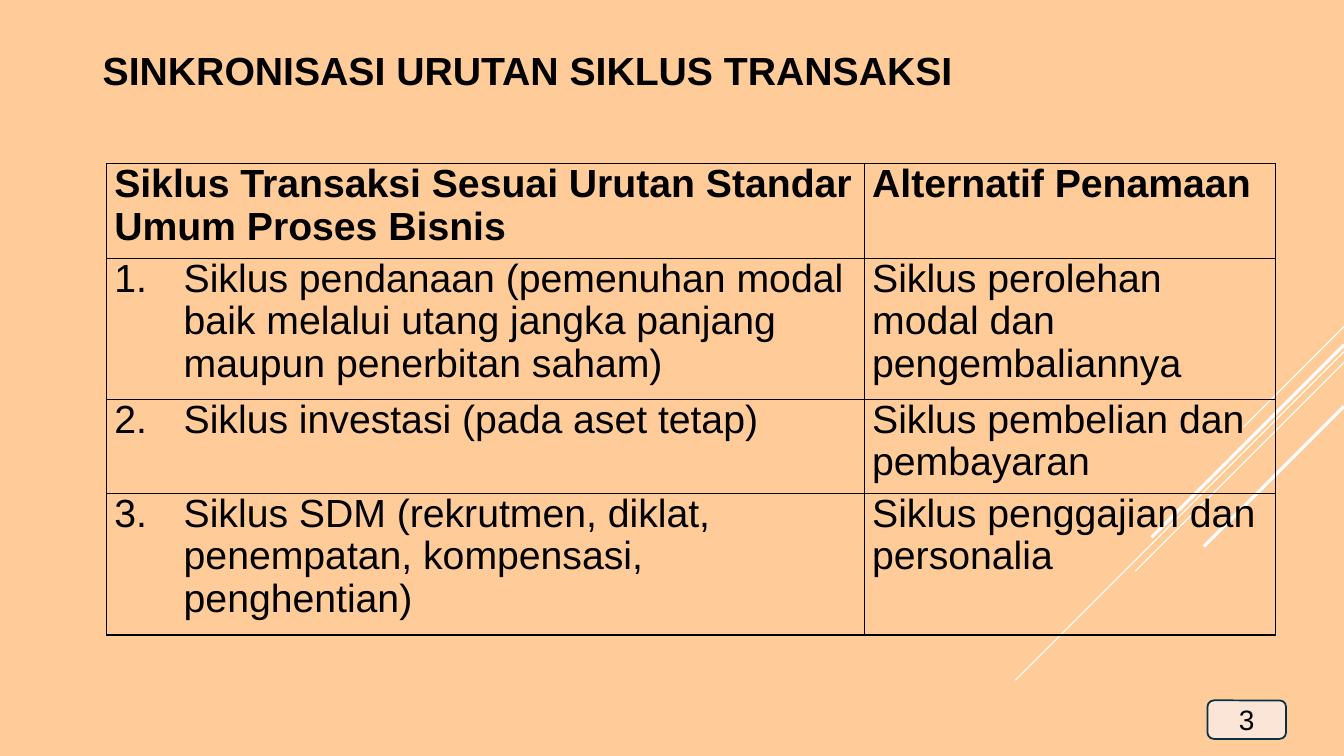
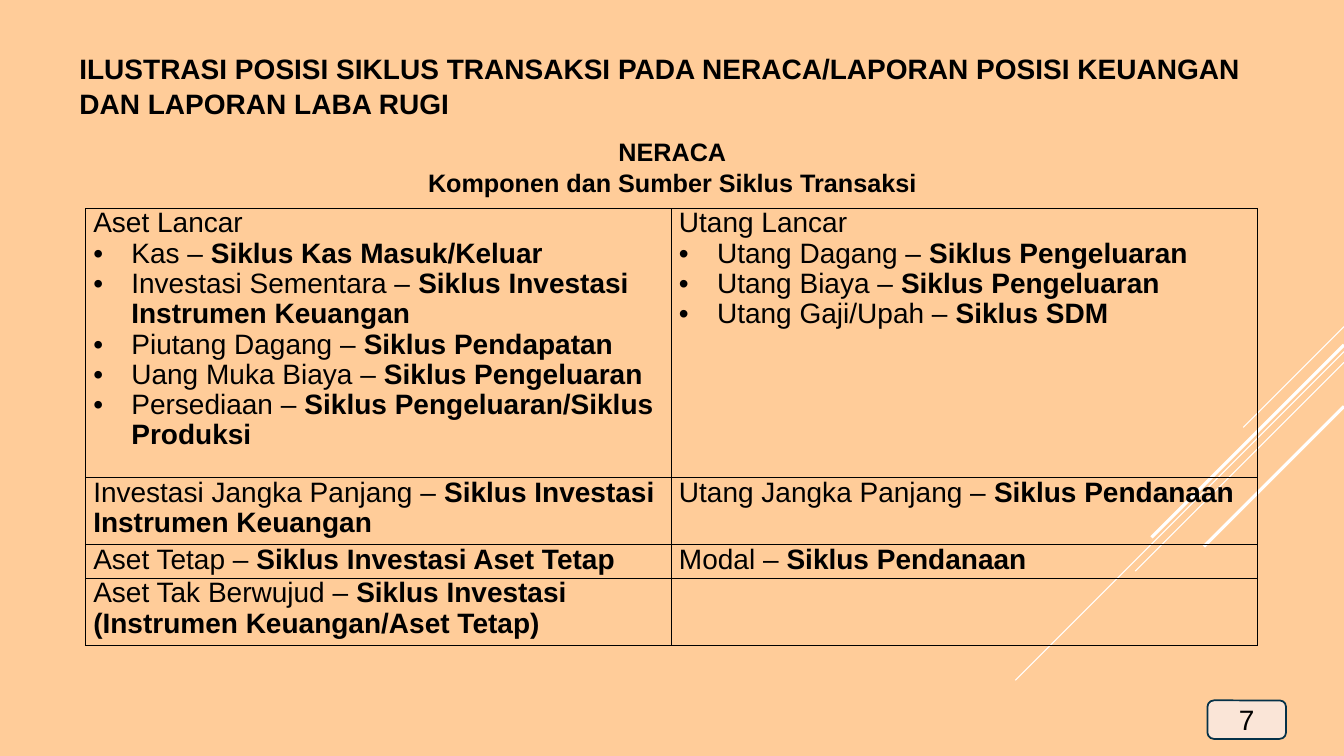
from lxml import etree
from pptx import Presentation
from pptx.dml.color import RGBColor
from pptx.enum.shapes import MSO_CONNECTOR, MSO_SHAPE
from pptx.enum.text import MSO_ANCHOR, PP_ALIGN
from pptx.oxml.ns import qn
from pptx.util import Cm, Pt

STRAIGHT = MSO_CONNECTOR.STRAIGHT
ROUNDED = MSO_SHAPE.ROUNDED_RECTANGLE
LEFT, CENTER = PP_ALIGN.LEFT, PP_ALIGN.CENTER
TOP, MIDDLE = MSO_ANCHOR.TOP, MSO_ANCHOR.MIDDLE

PEACH = RGBColor(0xFF, 0xCC, 0x99)
BLUSH = RGBColor(0xFA, 0xE5, 0xD7)
NAVY = RGBColor(0x04, 0x31, 0x48)
WHITE = RGBColor(0xFF, 0xFF, 0xFF)
BLACK = RGBColor(0, 0, 0)
FONT = "Arial"

SLIDE_W, SLIDE_H = 33.87, 19.05
# Diagonal rays from the right edge: top, run (equal across and down), width in points
RAYS = [
    (8.23, 2.54, 0.75),
    (8.86, 8.28, 0.75),
    (9.13, 5.26, 0.75),
    (8.69, 4.85, 2.25),
    (10.24, 3.53, 2.25),
]

CYCLE_ROWS = [
    ("**Siklus Transaksi Sesuai Urutan Standar Umum Proses Bisnis",
     "**Alternatif Penamaan"),
    ("1. Siklus pendanaan (pemenuhan modal baik melalui utang jangka panjang "
     "maupun penerbitan saham)",
     "Siklus perolehan modal dan pengembaliannya"),
    ("2. Siklus investasi (pada aset tetap)",
     "Siklus pembelian dan pembayaran"),
    ("3. Siklus SDM (rekrutmen, diklat, penempatan, kompensasi, penghentian)",
     "Siklus penggajian dan personalia"),
]
BALANCE_ROWS = [
    ("Aset Lancar\n"
     "• Kas – **Siklus Kas Masuk/Keluar\n"
     "• Investasi Sementara – **Siklus Investasi Instrumen Keuangan\n"
     "• Piutang Dagang – **Siklus Pendapatan\n"
     "• Uang Muka Biaya – **Siklus Pengeluaran\n"
     "• Persediaan – **Siklus Pengeluaran/Siklus Produksi",
     "Utang Lancar\n"
     "• Utang Dagang – **Siklus Pengeluaran\n"
     "• Utang Biaya – **Siklus Pengeluaran\n"
     "• Utang Gaji/Upah – **Siklus SDM"),
    ("Investasi Jangka Panjang – **Siklus Investasi Instrumen Keuangan",
     "Utang Jangka Panjang – **Siklus Pendanaan"),
    ("Aset Tetap – **Siklus Investasi Aset Tetap",
     "Modal – **Siklus Pendanaan"),
    ("Aset Tak Berwujud – **Siklus Investasi (Instrumen Keuangan/Aset Tetap)", ""),
]


def set_marker(paragraph, marker, indent):
    """Give a paragraph a hanging bullet, or a number when the marker is like '2.'."""
    properties = paragraph._p.get_or_add_pPr()
    properties.set("marL", str(Cm(indent)))
    properties.set("indent", str(-Cm(indent)))
    if marker == "•":
        etree.SubElement(properties, qn("a:buFont"), typeface=FONT)
        etree.SubElement(properties, qn("a:buChar"), char=marker)
    else:
        etree.SubElement(properties, qn("a:buAutoNum"), type="arabicPeriod",
                         startAt=marker.rstrip("."))


def write(frame, text, size, align=LEFT, spacing=1.0, indent=0):
    """Write one paragraph a line; ** starts bold, a leading '•' or '1.' is a marker."""
    frame.word_wrap = True
    for index, line in enumerate(text.split("\n")):
        paragraph = frame.paragraphs[0] if index == 0 else frame.add_paragraph()
        paragraph.alignment = align
        paragraph.line_spacing = spacing
        paragraph.font.size = Pt(size)
        if indent and line[:2] in ("• ", "1.", "2.", "3."):
            marker, line = line.split(" ", 1)
            set_marker(paragraph, marker, indent)
        for part, words in enumerate(line.split("**")):
            if words:
                run = paragraph.add_run()
                run.text = words
                run.font.name = FONT
                run.font.size = Pt(size)
                run.font.bold = part > 0
                run.font.color.rgb = BLACK


def add_text(slide, box, text, size, **style):
    frame = slide.shapes.add_textbox(*map(Cm, box)).text_frame
    frame.vertical_anchor = TOP
    write(frame, text, size, **style)


def add_rays(slide):
    for top, run, width in RAYS:
        ray = slide.shapes.add_connector(
            STRAIGHT, Cm(SLIDE_W), Cm(top), Cm(SLIDE_W - run), Cm(top + run))
        ray.line.color.rgb = WHITE
        ray.line.width = Pt(width)
        etree.SubElement(ray._element.spPr, qn("a:effectLst"))


def add_page_number(slide, number):
    badge = slide.shapes.add_shape(ROUNDED, Cm(30.43), Cm(17.65), Cm(1.98), Cm(0.97))
    badge.shadow.inherit = False
    badge.fill.solid()
    badge.fill.fore_color.rgb = BLUSH
    badge.line.color.rgb = NAVY
    badge.line.width = Pt(1.25)
    badge.text_frame.vertical_anchor = MIDDLE
    write(badge.text_frame, str(number), 20, align=CENTER)


def set_borders(cell):
    properties = cell._tc.get_or_add_tcPr()
    for position, side in enumerate(("a:lnL", "a:lnR", "a:lnT", "a:lnB")):
        border = etree.Element(qn(side), w=str(Pt(1)))
        fill = etree.SubElement(border, qn("a:solidFill"))
        etree.SubElement(fill, qn("a:srgbClr"), val=str(BLACK))
        properties.insert(position, border)


def add_grid(slide, left, top, widths, heights, rows, size, indent):
    """Place a ruled, unfilled table of marked-up texts."""
    table = slide.shapes.add_table(
        len(heights), len(widths), Cm(left), Cm(top),
        Cm(sum(widths)), Cm(sum(heights))).table
    table.first_row = table.horz_banding = False
    for column, width in zip(table.columns, widths):
        column.width = Cm(width)
    for row, height, texts in zip(table.rows, heights, rows):
        row.height = Cm(height)
        for cell, text in zip(row.cells, texts):
            cell.margin_left = cell.margin_right = Cm(0.19)
            cell.margin_top = cell.margin_bottom = 0
            cell.fill.background()
            set_borders(cell)
            write(cell.text_frame, text, size, spacing=0.97, indent=indent)


def add_base(deck, number):
    slide = deck.slides.add_slide(deck.slide_layouts[6])
    add_rays(slide)
    add_page_number(slide, number)
    return slide


def add_cycle_slide(deck):
    slide = add_base(deck, 3)
    add_text(slide, (2.34, 0.99, 22.81, 1.45),
             "**SINKRONISASI URUTAN SIKLUS TRANSAKSI", 28, spacing=1.04)
    add_grid(slide, 2.69, 4.13, (19.1, 10.36), (2.38, 3.56, 2.37, 3.56),
             CYCLE_ROWS, size=28, indent=1.75)


def add_balance_slide(deck):
    slide = add_base(deck, 7)
    add_text(slide, (1.75, 1.14, 30.38, 1.96),
             "**ILUSTRASI POSISI SIKLUS TRANSAKSI PADA NERACA/LAPORAN POSISI "
             "KEUANGAN DAN LAPORAN LABA RUGI", 20, spacing=1.04)
    add_grid(slide, 2.16, 5.26, (14.76, 14.76), (6.78, 1.69, 0.85, 1.69),
             BALANCE_ROWS, size=20, indent=0.96)
    add_text(slide, (8.46, 3.28, 16.97, 1.8),
             "**NERACA\n**Komponen dan Sumber Siklus Transaksi", 18,
             align=CENTER, spacing=1.04)


def main():
    deck = Presentation()
    deck.slide_width, deck.slide_height = Cm(SLIDE_W), Cm(SLIDE_H)
    background = deck.slide_master.background.fill
    background.solid()
    background.fore_color.rgb = PEACH
    add_cycle_slide(deck)
    add_balance_slide(deck)
    deck.save("out.pptx")


if __name__ == "__main__":
    main()
